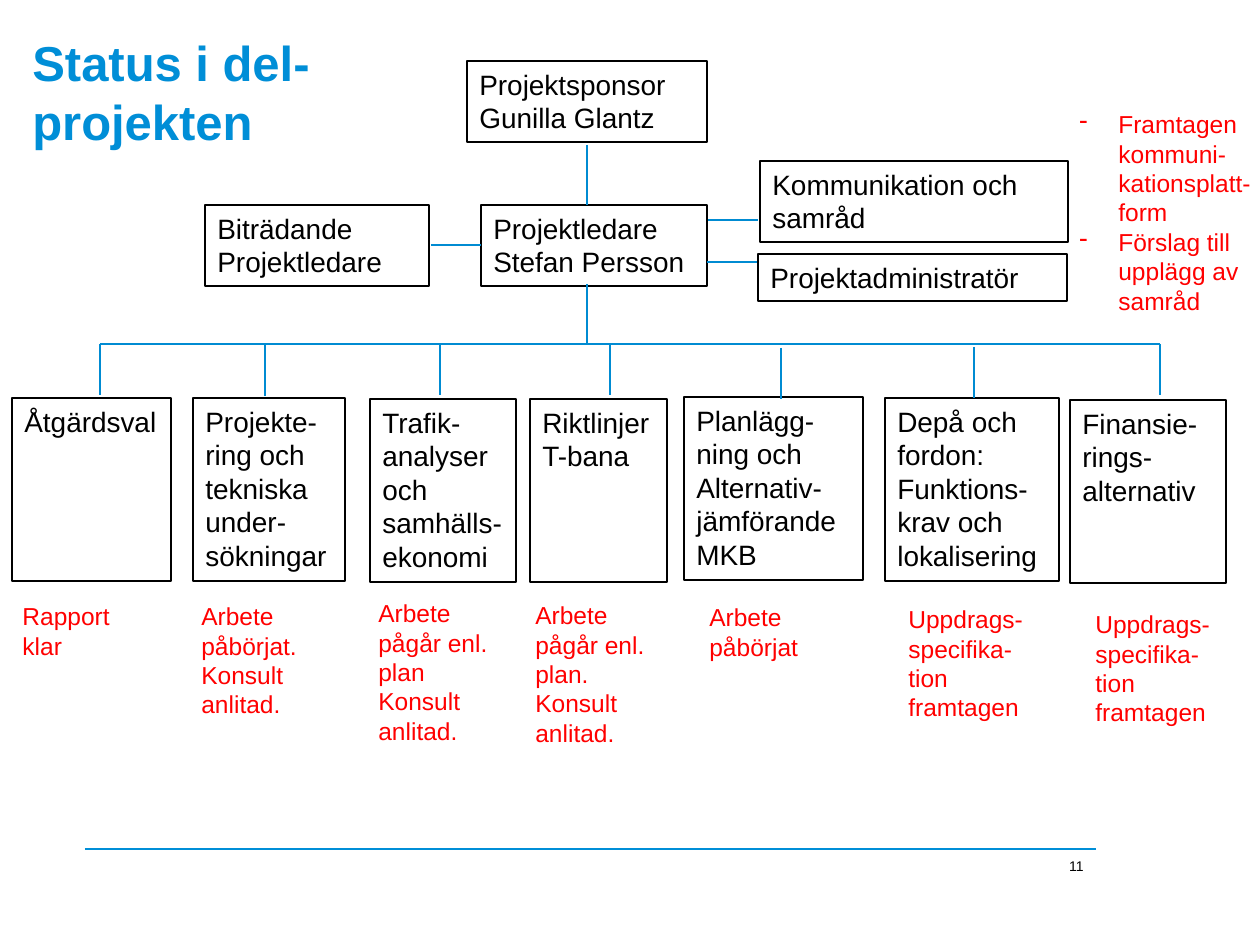
"""Builds the project organisation slide with the status of each subproject."""
import pptx
import pptx.util
import pptx.dml.color
import pptx.enum.shapes
import pptx.enum.text
import pptx.oxml
import pptx.oxml.ns

PX = 914400 / 126
THEME = {
    "font": "Arial",
    "title": (28, "008ED7"), "box": (16, "000000"), "status": (14, "FF0000"), "number": (8, "000000"),
    "rule": "008ED7", "connector": "008BD2", "border": "000000", "hair": 0.75,
}


def add_text(s, x, y, w, h, paragraphs, style, boxed=False, bullet=False):
    """Add a text box, or a bordered rectangle, holding the paragraphs."""
    at = [round(v * PX) for v in (x, y, w, h)]
    if boxed:
        sp = s.shapes.add_shape(pptx.enum.shapes.MSO_SHAPE.RECTANGLE, *at)
        sp.shadow.inherit = False
        sp.fill.background()
        sp.line.color.rgb = pptx.dml.color.RGBColor.from_string(THEME["border"])
        sp.line.width = pptx.util.Pt(THEME["hair"])
    else:
        sp = s.shapes.add_textbox(*at)
    tf = sp.text_frame
    tf.word_wrap = True
    tf.vertical_anchor = pptx.enum.text.MSO_ANCHOR.TOP
    if style in ("box", "status"):
        tf.auto_size = pptx.enum.text.MSO_AUTO_SIZE.SHAPE_TO_FIT_TEXT
    size, color = THEME[style]
    for i, text in enumerate(paragraphs):
        p = tf.add_paragraph() if i else tf.paragraphs[0]
        p.alignment = pptx.enum.text.PP_ALIGN.RIGHT if style == "number" else pptx.enum.text.PP_ALIGN.LEFT
        if bullet:
            pPr = p._p.get_or_add_pPr()
            pPr.set("marL", str(round(39 * PX)))
            pPr.set("indent", str(round(-39 * PX)))
            pPr.append(pptx.oxml.parse_xml(f'<a:buChar {pptx.oxml.ns.nsdecls("a")} char="-"/>'))
        r = p.add_run()
        r.text = text
        r.font.name = THEME["font"]
        r.font.size = pptx.util.Pt(size)
        r.font.bold = style == "title"
        r.font.color.rgb = pptx.dml.color.RGBColor.from_string(color)


def add_line(s, x1, y1, x2, y2, color, width):
    """Add a straight connector without shadow."""
    ends = [round(v * PX) for v in (x1, y1, x2, y2)]
    ln = s.shapes.add_connector(pptx.enum.shapes.MSO_CONNECTOR.STRAIGHT, *ends)
    ln.line.color.rgb = pptx.dml.color.RGBColor.from_string(color)
    ln.line.width = pptx.util.Pt(width)
    ln._element.spPr.append(pptx.oxml.parse_xml(f'<a:effectLst {pptx.oxml.ns.nsdecls("a")}/>'))


prs = pptx.Presentation()
prs.slide_width = round(1260 * PX)
prs.slide_height = round(945 * PX)
s = prs.slides.add_slide(prs.slide_layouts[6])

add_line(s, 85, 849, 1096, 849, THEME["rule"], 1)
add_text(s, 932, 851, 164, 60, ["11"], "number")
add_text(s, 20, 26, 503, 92, ["Status i del-projekten"], "title")

roles = [
    (467, 61, 240, 81, ["Projektsponsor", "Gunilla Glantz"]),
    (481, 205, 226, 81, ["Projektledare", "Stefan Persson"]),
    (205, 205, 224, 81, ["Biträdande Projektledare"]),
    (760, 161, 308, 81, ["Kommunikation och samråd"]),
    (758, 254, 309, 47, ["Projektadministratör"]),
]
for x, y, w, h, paragraphs in roles:
    add_text(s, x, y, w, h, paragraphs, "box", boxed=True)

subprojects = [
    (12, 398, 159, "Åtgärdsval", 10, 595, 146, ["Rapport klar"]),
    (193, 398, 152, "Projekte-ring och tekniska under-sökningar",
     189, 595, 152, ["Arbete påbörjat.", "Konsult anlitad."]),
    (370, 399, 146, "Trafik-analyser och samhälls-ekonomi",
     366, 592, 152, ["Arbete pågår enl. plan", "Konsult anlitad."]),
    (530, 399, 137, "Riktlinjer T-bana",
     523, 594, 152, ["Arbete pågår enl. plan. Konsult anlitad."]),
    (684, 397, 179, "Planlägg-ning och Alternativ-jämförande MKB",
     697, 596, 152, ["Arbete påbörjat"]),
    (885, 398, 174, "Depå och fordon: Funktions-krav och lokalisering",
     896, 598, 152, ["Uppdrags-specifika-tion framtagen"]),
    (1070, 400, 156, "Finansie-rings-alternativ",
     1083, 603, 152, ["Uppdrags-specifika-tion framtagen"]),
]
for x, y, w, name, status_x, status_y, status_w, status in subprojects:
    add_text(s, x, y, w, 183, [name], "box", boxed=True)
    add_text(s, status_x, status_y, status_w, 72, status, "status")

add_text(s, 1067, 103, 210, 251,
         ["Framtagen kommuni-kationsplatt-form", "Förslag till upplägg av samråd"],
         "status", bullet=True)

connectors = [
    (587, 145, 587, 205), (587, 284, 587, 344), (431, 245, 481, 245),
    (708, 220, 758, 220), (707, 262, 757, 262), (100, 344, 1160, 344),
]
drops = [(100, 344), (265, 345), (440, 344), (610, 344), (781, 348), (974, 347), (1160, 344)]
connectors += [(x, y, x, y + 51) for x, y in drops]
for ends in connectors:
    add_line(s, *ends, THEME["connector"], THEME["hair"])

prs.save("out.pptx")
